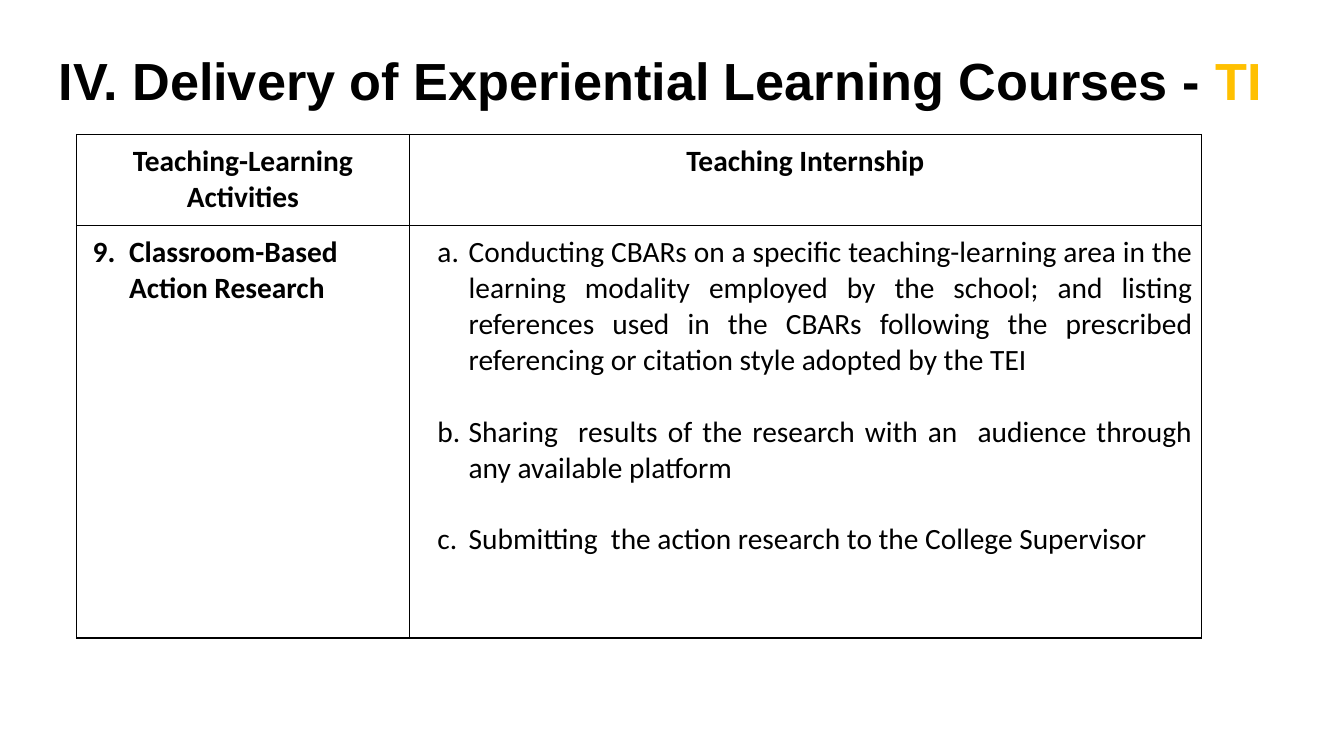
import pptx
import pptx.util
import pptx.dml.color
import pptx.enum.text
import pptx.oxml
import pptx.oxml.ns

Pt = pptx.util.Pt
Inches = pptx.util.Inches
RGB = pptx.dml.color.RGBColor
ALIGN = pptx.enum.text.PP_ALIGN
ANCHOR = pptx.enum.text.MSO_ANCHOR
NS = pptx.oxml.ns.nsdecls("a")

BLACK = RGB(0, 0, 0)
WHITE = RGB(255, 255, 255)
GOLD = RGB(0xFF, 0xC0, 0)

DUTIES = [
    "Conducting CBARs on a specific teaching-learning area in the learning "
    "modality employed by the school; and listing references used in the "
    "CBARs following the prescribed referencing or citation style adopted "
    "by the TEI",
    "Sharing  results of the research with an  audience through any "
    "available platform",
    "Submitting  the action research to the College Supervisor",
]


class Board:
    head, body = "Arial", "Calibri"
    big, size = 37.3, 21
    gap = 25.6

    def __init__(self, deck):
        self.wide, self.high = deck.slide_width, deck.slide_height
        self.slide = deck.slides.add_slide(deck.slide_layouts[5])

    def place(self, x, y, w, h):
        return (round(x * self.wide), round(y * self.high),
                round(w * self.wide), round(h * self.high))

    def run(self, para, text, font, size, color=BLACK, bold=True):
        run = para.add_run()
        run.text = text
        run.font.name, run.font.size = font, Pt(size)
        run.font.bold, run.font.color.rgb = bold, color

    def title(self, box, parts):
        shape = self.slide.shapes.title
        shape.left, shape.top, shape.width, shape.height = self.place(*box)
        frame = shape.text_frame
        frame.word_wrap = True
        frame.auto_size = pptx.enum.text.MSO_AUTO_SIZE.NONE
        frame.vertical_anchor = ANCHOR.MIDDLE
        frame.margin_left = frame.margin_right = Inches(0.13)
        frame.margin_top = frame.margin_bottom = Inches(0.13)
        para = frame.paragraphs[0]
        para.alignment = ALIGN.LEFT
        para.line_spacing = 0.9
        for text, color in parts:
            self.run(para, text, self.head, self.big, color)

    def table(self, box, cols, rows):
        grid = self.slide.shapes.add_table(
            len(rows), len(cols), *self.place(*box)).table
        grid.first_row = grid.horz_banding = False
        for col, share in zip(grid.columns, cols):
            col.width = round(share * self.wide)
        for row, share in zip(grid.rows, rows):
            row.height = round(share * self.high)
        for cell in grid.iter_cells():
            self.frame(cell)
        return grid

    def frame(self, cell):
        cell.margin_left = cell.margin_right = Inches(0.09)
        cell.margin_top = cell.margin_bottom = Inches(0.09)
        cell.vertical_anchor = ANCHOR.TOP
        props = cell._tc.get_or_add_tcPr()
        for side in "LRTB":
            props.append(pptx.oxml.parse_xml(
                f'<a:ln{side} {NS} w="{Pt(1)}"><a:solidFill>'
                f'<a:srgbClr val="{BLACK}"/></a:solidFill></a:ln{side}>'))
        cell.fill.solid()
        cell.fill.fore_color.rgb = WHITE

    def label(self, cell, text):
        para = cell.text_frame.paragraphs[0]
        para.alignment = ALIGN.CENTER
        self.run(para, text, self.body, self.size)

    def items(self, cell, texts, kind, left, hang, start=1, bold=False):
        frame = cell.text_frame
        for i, text in enumerate(texts):
            para = frame.add_paragraph() if i else frame.paragraphs[0]
            para.alignment = ALIGN.JUSTIFY
            para.space_before = Pt(self.gap if i else 0)
            self.run(para, text, self.body, self.size, bold=bold)
            props = para._p.get_or_add_pPr()
            props.set("marL", str(Inches(left)))
            props.set("indent", str(-Inches(hang)))
            for bit in (
                f'<a:buClr {NS}><a:srgbClr val="{BLACK}"/></a:buClr>',
                f'<a:buFont {NS} typeface="{self.body}"/>',
                f'<a:buAutoNum {NS} type="{kind}" startAt="{start}"/>',
            ):
                props.append(pptx.oxml.parse_xml(bit))


def main():
    deck = pptx.Presentation()
    deck.slide_width, deck.slide_height = Inches(13.33), Inches(7.5)
    board = Board(deck)
    board.title((0.034, 0.051, 0.932, 0.119), [
        ("IV. Delivery of Experiential Learning Courses - ", BLACK),
        ("TI", GOLD),
    ])
    grid = board.table((0.057, 0.178, 0.837, 0.666),
                       (0.2475, 0.5895), (0.12, 0.546))
    for col, text in enumerate(("Teaching-Learning Activities",
                                "Teaching Internship")):
        board.label(grid.cell(0, col), text)
    board.items(grid.cell(1, 0), ["Classroom-Based Action Research"],
                "arabicPeriod", 0.43, 0.36, start=9, bold=True)
    board.items(grid.cell(1, 1), DUTIES, "alphaLcPeriod", 0.5, 0.31)
    deck.save("out.pptx")


if __name__ == "__main__":
    main()
